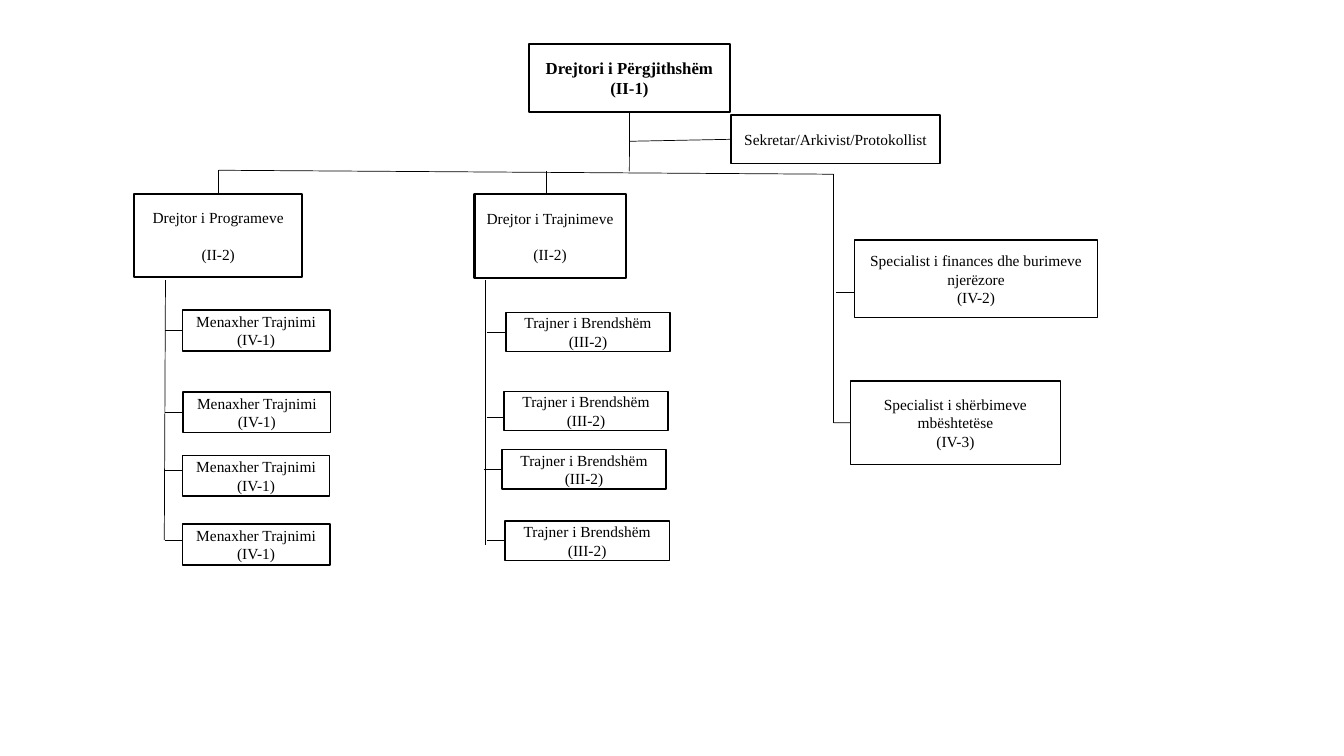
"""Build a one-slide organisation chart of directors, managers and trainers."""
from lxml import etree
from pptx import Presentation
from pptx.dml.color import RGBColor
from pptx.enum import shapes, text
from pptx.oxml import ns
from pptx.util import Cm, Pt

FONT = "Times New Roman"
BLACK, WHITE = "000000", "FFFFFF"

HEAD = (["Drejtori i Përgjithshëm", "(II-1)"], (13.34, 1.12, 5.05, 1.70))
SECRETARY = (["Sekretar/Arkivist/Protokollist"], (18.42, 2.90, 5.28, 1.22))
PROGRAMMES = (["Drejtor i Programeve", "(II-2)"], (3.38, 4.88, 4.24, 2.11))
TRAINING = (["Drejtor i Trajnimeve", "(II-2)"], (11.96, 4.90, 3.81, 2.11))
FINANCE = (["Specialist i finances dhe burimeve njerëzore", "(IV-2)"],
           (21.54, 6.05, 6.12, 1.96))
SUPPORT = (["Specialist i shërbimeve mbështetëse", "(IV-3)"],
           (21.44, 9.60, 5.28, 2.11))

# Each member: left, top, line width, stub start, stub height (None = middle of side)
TEAMS = [
    {"lines": ["Menaxher Trajnimi", "(IV-1)"], "size": (3.71, 1.02),
     "spine": (4.17, 7.06, 4.14, 13.61),
     "members": [(4.60, 7.82, 1.25, 4.17, None), (4.62, 9.88, 1.25, 4.17, None),
                 (4.60, 11.48, 1, 4.17, 11.86), (4.60, 13.21, 1.25, 4.17, 13.61)]},
    {"lines": ["Trajner i Brendshëm", "(III-2)"], "size": (4.14, 0.99),
     "spine": (12.24, 7.06, 12.24, 13.74),
     "members": [(12.75, 7.87, 1, 12.27, None), (12.70, 9.86, 1, 12.27, 10.52),
                 (12.65, 11.33, 1.25, 12.19, None), (12.73, 13.13, 1, 12.27, None)]},
]

BUS = (5.51, 4.29, 21.01, 4.39)
SUPPORT_MIDDLE = 10.65

prs = Presentation()
prs.slide_width, prs.slide_height = Cm(33.87), Cm(19.05)
s = prs.slides.add_slide(prs.slide_layouts[6])


def color(value):
    return RGBColor.from_string(value)


def write(p, line, size=11, bold=False, before=0):
    p.alignment = text.PP_ALIGN.CENTER
    p.space_before = Pt(before)
    r = p.add_run()
    r.text = line
    r.font.name, r.font.size, r.font.bold = FONT, Pt(size), bold
    r.font.color.rgb = color(BLACK)


def box(lines, place, width=1, gap=0, **style):
    sp = s.shapes.add_shape(shapes.MSO_SHAPE.RECTANGLE, *map(Cm, place))
    sp.shadow.inherit = False
    sp.fill.solid()
    sp.fill.fore_color.rgb = color(WHITE)
    sp.line.color.rgb = color(BLACK)
    sp.line.width = Pt(width)
    tf = sp.text_frame
    tf.word_wrap = True
    tf.vertical_anchor = text.MSO_ANCHOR.MIDDLE
    for i, line in enumerate(lines):
        p = tf.add_paragraph() if i else tf.paragraphs[0]
        write(p, line, before=gap if i else 0, **style)
    return sp


def connect(x1, y1, x2, y2, begin=None, end=None):
    c = s.shapes.add_connector(shapes.MSO_CONNECTOR.STRAIGHT,
                               *map(Cm, (x1, y1, x2, y2)))
    c.line.color.rgb = color(BLACK)
    c.line.width = Pt(0.5)
    etree.SubElement(c._element.spPr, ns.qn("a:effectLst"))
    if begin:
        c.begin_connect(*begin)
    if end:
        c.end_connect(*end)


head = box(*HEAD, width=1.5, size=12, bold=True)
secretary = box(*SECRETARY, width=1.25)
programmes = box(*PROGRAMMES, width=1.5, gap=13)
box(*TRAINING, width=1.5, gap=13)
box(*FINANCE)
support = box(*SUPPORT)

connect(*BUS)
connect(15.86, 2.82, 15.86, 4.32, begin=(head, 2))
connect(15.86, 3.56, 18.42, 3.51, end=(secretary, 1))
connect(5.50, 4.29, 5.50, 4.88, end=(programmes, 0))
connect(13.77, 4.32, 13.77, 4.90)
connect(21.01, 4.39, 21.01, SUPPORT_MIDDLE)
connect(21.08, 7.37, 21.54, 7.37)
connect(21.01, SUPPORT_MIDDLE, 21.44, SUPPORT_MIDDLE, end=(support, 1))

for team in TEAMS:
    connect(*team["spine"])
    for left, top, width, start, y in team["members"]:
        sp = box(team["lines"], (left, top, *team["size"]), width=width)
        middle = top + team["size"][1] / 2
        if y is None:
            connect(start, middle, left, middle, end=(sp, 1))
        else:
            connect(start, y, left, y)

prs.save("out.pptx")
